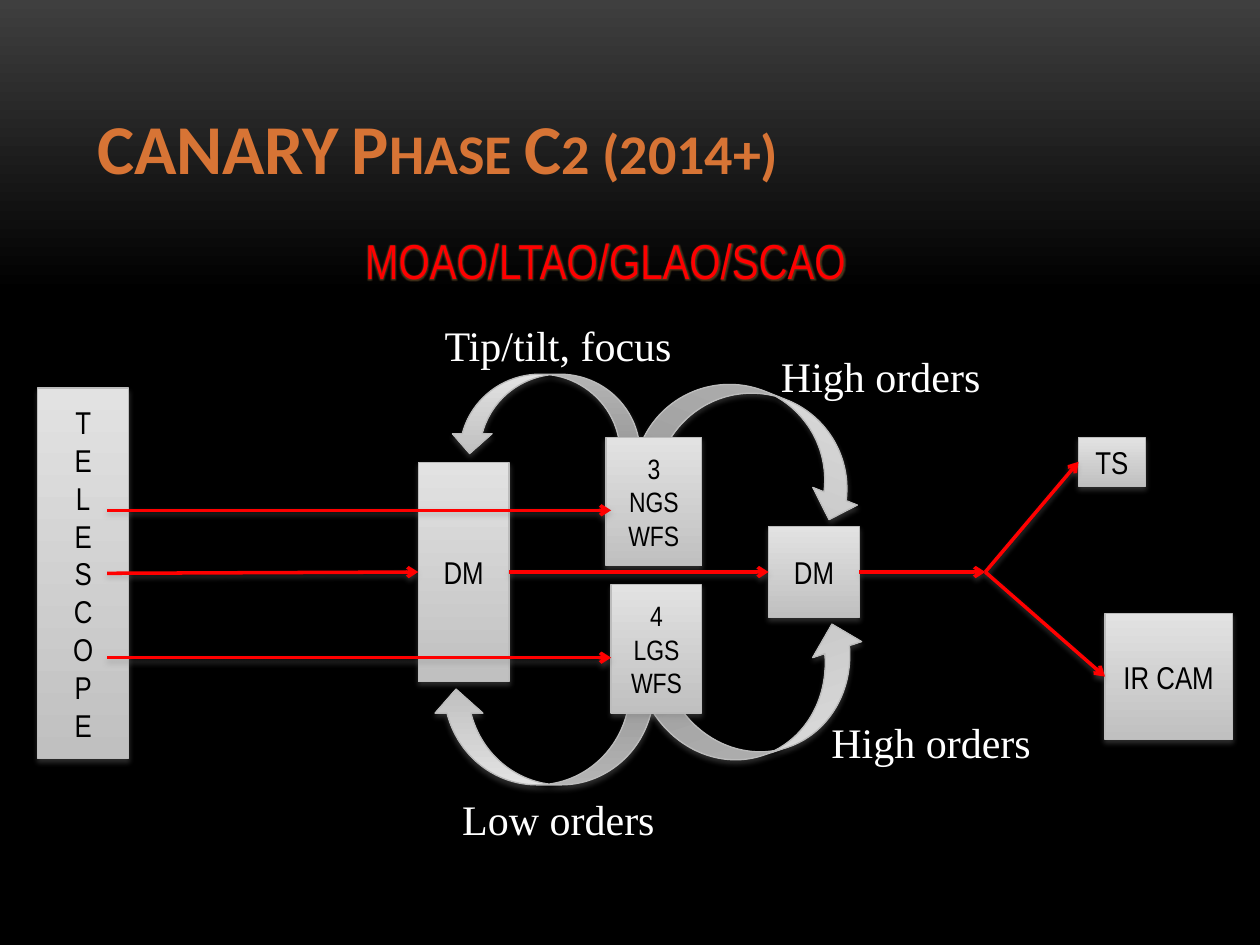
from dataclasses import dataclass

from lxml import etree
from pptx import Presentation
from pptx.dml.color import RGBColor
from pptx.enum.shapes import MSO_CONNECTOR, MSO_SHAPE
from pptx.enum.text import MSO_ANCHOR, MSO_AUTO_SIZE, PP_ALIGN
from pptx.oxml import parse_xml
from pptx.oxml.ns import nsdecls, qn
from pptx.util import Inches, Pt


@dataclass(frozen=True)
class Theme:
    """Colours, fonts and type sizes of the slide."""
    bg_top: str = "3F3F3F"
    bg: str = "000000"
    title: str = "D77435"
    beam: str = "FF0000"
    glow: str = "7A5C30"
    label: str = "FFFFFF"
    text: str = "000000"
    box_top: str = "E2E2E2"
    box_bottom: str = "C0C0C0"
    border: str = "BCBCBC"
    shadow: str = "808080"
    title_font: str = "Calibri"
    box_font: str = "Arial Narrow"
    label_font: str = "Times New Roman"
    title_size: int = 40
    heading_size: int = 28
    label_size: int = 24
    box_size: int = 18
    sensor_size: int = 16


THEME = Theme()
SPLIT = (7.82, 4.54)
BEAM_START = 0.85


def inches(values):
    """Convert a sequence of numbers to lengths."""
    return [Inches(v) for v in values]


def set_gradient(fill, top, bottom, end=1.0):
    """Fill from top to bottom, reaching the last colour at end."""
    fill.gradient()
    fill.gradient_angle = 270
    for stop, colour, position in zip(fill.gradient_stops, (top, bottom), (0, end)):
        stop.color.rgb = RGBColor.from_string(colour)
        stop.position = position


def add_shadow(s, alpha):
    """Give a shape or connector a soft shadow below it."""
    s._element.spPr.append(parse_xml(
        f'<a:effectLst {nsdecls("a")}><a:outerShdw blurRad="39370" dist="22860" '
        f'dir="5400000" rotWithShape="0"><a:srgbClr val="{THEME.shadow}">'
        f'<a:alpha val="{alpha * 1000}"/></a:srgbClr></a:outerShdw></a:effectLst>'))


def format_text(tf, font, size, colour, align=PP_ALIGN.LEFT):
    """Format every paragraph of a text frame alike."""
    for p in tf.paragraphs:
        p.alignment = align
        for r in p.runs:
            r.font.name = font
            r.font.size = Pt(size)
            r.font.color.rgb = RGBColor.from_string(colour)


def add_panel(slide, preset, box):
    """Add a grey gradient shape with a thin border and a shadow."""
    s = slide.shapes.add_shape(preset, *inches(box))
    set_gradient(s.fill, THEME.box_top, THEME.box_bottom)
    s.line.color.rgb = RGBColor.from_string(THEME.border)
    s.line.width = Pt(0.75)
    add_shadow(s, 35)
    return s


def add_block(slide, box, text, size=THEME.box_size):
    """Add a labelled component of the optical bench."""
    s = add_panel(slide, MSO_SHAPE.RECTANGLE, box)
    tf = s.text_frame
    tf.word_wrap = True
    tf.vertical_anchor = MSO_ANCHOR.MIDDLE
    tf.text = text
    format_text(tf, THEME.box_font, size, THEME.text, PP_ALIGN.CENTER)
    return s


def add_loop(slide, box, rotation=0, flips=()):
    """Add a curved arrow for a control loop."""
    s = add_panel(slide, MSO_SHAPE.CURVED_DOWN_ARROW, box)
    s.rotation = rotation
    for flip in flips:
        s._element.spPr.xfrm.set(flip, "1")


def add_beam(slide, start, end, source=None, target=None):
    """Add a red light path, joined to the sides of the given blocks."""
    c = slide.shapes.add_connector(MSO_CONNECTOR.STRAIGHT, *inches(start + end))
    if source is not None:
        c.begin_connect(source, 3)
    if target is not None:
        c.end_connect(target, 1)
    c.line.color.rgb = RGBColor.from_string(THEME.beam)
    c.line.width = Pt(2)
    etree.SubElement(c.line._get_or_add_ln(), qn("a:tailEnd"), type="arrow")
    add_shadow(c, 38)


def add_label(slide, box, text, font=THEME.label_font, size=THEME.label_size,
              colour=THEME.label, wrap=False):
    """Add a line of free text."""
    s = slide.shapes.add_textbox(*inches(box))
    tf = s.text_frame
    tf.word_wrap = wrap
    tf.auto_size = MSO_AUTO_SIZE.SHAPE_TO_FIT_TEXT
    tf.text = text
    format_text(tf, font, size, colour)
    return s


def add_title(slide, box):
    """Place the small-caps title."""
    s = slide.shapes.title
    s.left, s.top, s.width, s.height = inches(box)
    tf = s.text_frame
    tf.text = "CANARY Phase C2 (2014+)"
    tf.auto_size = MSO_AUTO_SIZE.NONE
    tf.vertical_anchor = MSO_ANCHOR.BOTTOM
    format_text(tf, THEME.title_font, THEME.title_size, THEME.title)
    font = tf.paragraphs[0].runs[0].font
    font.bold = True
    font._element.set("cap", "small")


def add_heading(slide, box):
    """Place the glowing list of modes."""
    s = add_label(slide, box, "MOAO/LTAO/GLAO/SCAO", THEME.box_font,
                  THEME.heading_size, THEME.beam, True)
    r = s.text_frame.paragraphs[0].runs[0]
    r.font._element.find(qn("a:solidFill")).addnext(parse_xml(
        f'<a:effectLst {nsdecls("a")}><a:glow rad="38100"><a:srgbClr val="{THEME.glow}">'
        f'<a:alpha val="60000"/></a:srgbClr></a:glow></a:effectLst>'))


def add_loops(slide):
    """Draw the four control loops with their labels."""
    add_loop(slide, (3.43, 5.47, 1.76, 0.76), flips=("flipH", "flipV"))
    add_loop(slide, (3.57, 2.97, 1.51, 0.63), flips=("flipH",))
    add_loop(slide, (5.16, 3.13, 1.8, 0.76), 21.6)
    add_loop(slide, (5.17, 5.15, 1.8, 0.82), 341.9, ("flipV",))
    add_label(slide, (3.43, 2.49, 2.02, 0.5), "Tip/tilt, focus")
    add_label(slide, (3.57, 6.25, 1.74, 0.5), "Low orders")
    for left, top in ((6.1, 2.73), (6.5, 5.64)):
        add_label(slide, (left, top, 1.8, 0.5), "High orders")


def add_bench(slide):
    """Draw the components and the light paths between them."""
    add_block(slide, (0.3, 3.08, 0.72, 2.94), "\n".join("TELESCOPE"))
    first_dm = add_block(slide, (3.32, 3.67, 0.72, 1.74), "DM")
    second_dm = add_block(slide, (6.1, 4.18, 0.72, 0.72), "DM")
    add_block(slide, (4.81, 3.47, 0.76, 1.02), "3\nNGS\nWFS", THEME.sensor_size)
    add_block(slide, (4.85, 4.64, 0.72, 1.02), "4\nLGS\nWFS", THEME.sensor_size)
    ts = add_block(slide, (8.56, 3.47, 0.53, 0.39), "TS")
    camera = add_block(slide, (8.77, 4.87, 1.01, 1), "IR CAM")

    for y in (4.05, 5.22):
        add_beam(slide, (BEAM_START, y), (4.85, y))
    add_beam(slide, (BEAM_START, 4.55), (3.32, 4.55), target=first_dm)
    add_beam(slide, (4.04, 4.54), (6.1, 4.54), first_dm, second_dm)
    add_beam(slide, (6.82, 4.54), SPLIT, source=second_dm)
    add_beam(slide, SPLIT, (8.56, 3.66), target=ts)
    add_beam(slide, SPLIT, (8.77, 5.37), target=camera)


def main():
    """Build and save the slide."""
    prs = Presentation()
    prs.slide_width, prs.slide_height = Inches(10), Inches(7.5)
    slide = prs.slides.add_slide(prs.slide_layouts[5])
    set_gradient(slide.background.fill, THEME.bg_top, THEME.bg, 0.31)
    add_title(slide, (0.67, 0.3, 8.67, 1.25))
    add_heading(slide, (2.8, 1.78, 4.09, 0.57))
    add_loops(slide)
    add_bench(slide)
    prs.save("out.pptx")


if __name__ == "__main__":
    main()
